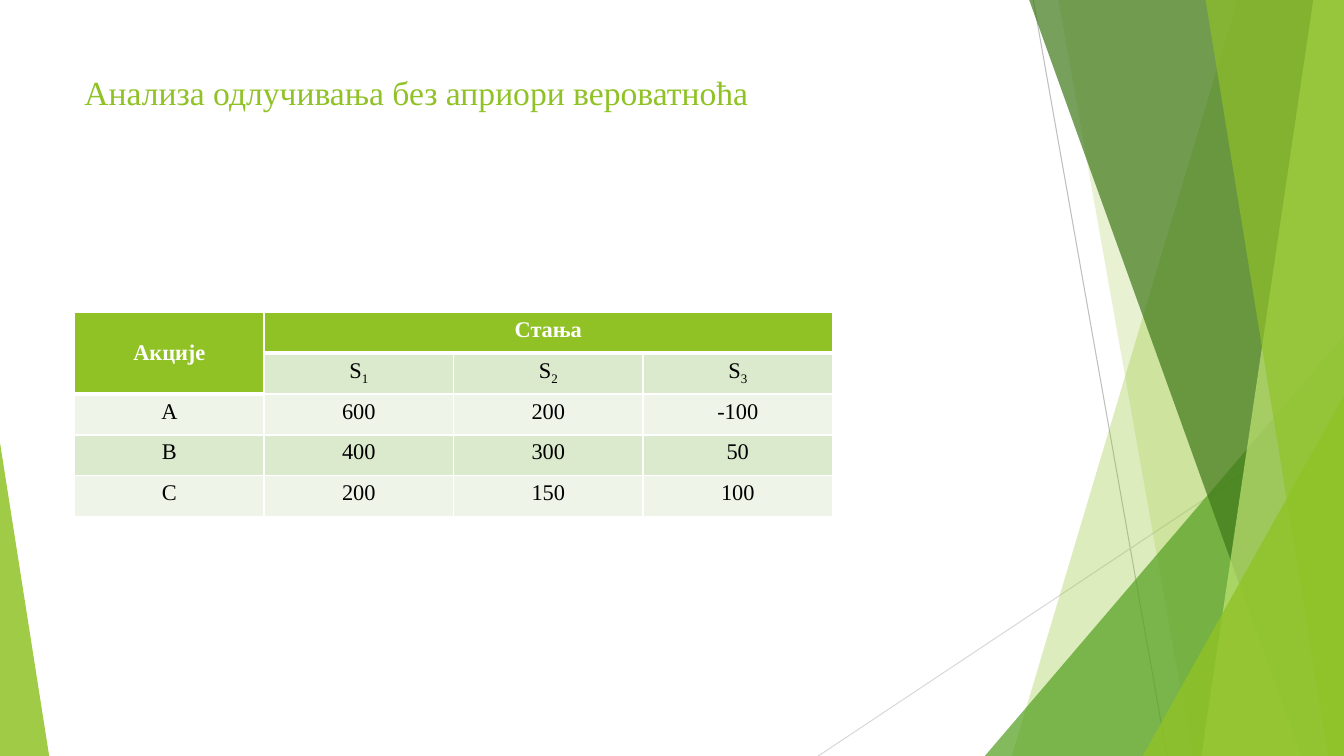
from lxml import etree
from pptx import Presentation
from pptx.dml.color import RGBColor
from pptx.enum.shapes import MSO_CONNECTOR, MSO_SHAPE
from pptx.enum.text import MSO_ANCHOR, PP_ALIGN
from pptx.oxml.ns import qn
from pptx.util import Cm, Pt

LINE = MSO_CONNECTOR.STRAIGHT
TRIANGLE = MSO_SHAPE.ISOSCELES_TRIANGLE
MIDDLE, TOP = MSO_ANCHOR.MIDDLE, MSO_ANCHOR.TOP
CENTER = PP_ALIGN.CENTER
FONT = "Times New Roman"
WIDTH, HEIGHT = 33.87, 19.05
COLORS = {
    "lime": "90C226", "green": "54A021", "dark": "3F7819", "light": "C0E474",
    "gray": "BFBFBF", "pale_gray": "D9D9D9", "white": "FFFFFF", "black": "000000",
    "band": "DBE9CD", "pale_band": "EEF4E8",
}


def paint(sp, color, alpha):
    sp.shadow.inherit = False
    sp.fill.solid()
    sp.fill.fore_color.rgb = RGBColor.from_string(COLORS[color])
    sp.line.fill.background()
    clr = sp.fill._xPr.find(qn("a:solidFill"))[0]
    etree.SubElement(clr, qn("a:alpha"), val=str(alpha * 1000))


def add_run(p, text, color, **formats):
    r = p.add_run()
    r.text = text
    r.font.color.rgb = RGBColor.from_string(COLORS[color])
    for name, value in {"name": FONT, **formats}.items():
        setattr(r.font, name, value)
    return r


prs = Presentation()
prs.slide_width, prs.slide_height = Cm(WIDTH), Cm(HEIGHT)
s = prs.slides.add_slide(prs.slide_layouts[6])

for x1, y1, x2, y2, color in [
    (26.04, 0, 29.41, HEIGHT, "gray"),
    (WIDTH, 10.24, 20.62, HEIGHT, "pale_gray"),
]:
    line = s.shapes.add_connector(LINE, Cm(x1), Cm(y1), Cm(x2), Cm(y2))
    line.line.color.rgb = RGBColor.from_string(COLORS[color])
    line.line.width = Pt(0.75)
    etree.SubElement(line._element.spPr, qn("a:effectLst"))

facets = [
    ("band", (31.19, 25.5), "lime", 30),
    ("band", (26.67, 30.05), "lime", 20),
    ("triangle", (24.82, 8.46, 9.05, 10.59, 1), "green", 72),
    ("band", (25.93, 32.79), "dark", 70),
    ("band", (33.1, 30.28), "light", 70),
    ("band", (30.38, 33.48), "lime", 65),
    ("triangle", (28.8, 9.98, 5.07, 9.07, 1), "lime", 80),
    ("triangle", (0, 11.15, 1.24, 7.9, 0), "lime", 85),
]
for kind, geometry, color, alpha in facets:
    if kind == "band":
        top_x, bottom_x = geometry
        fb = s.shapes.build_freeform(Cm(top_x), Cm(-0.02))
        fb.add_line_segments([
            (Cm(WIDTH), Cm(-0.02)), (Cm(WIDTH), Cm(HEIGHT)), (Cm(bottom_x), Cm(HEIGHT)),
        ])
        sp = fb.convert_to_shape()
    else:
        *box, apex = geometry
        sp = s.shapes.add_shape(TRIANGLE, *map(Cm, box))
        sp.adjustments[0] = apex
    paint(sp, color, alpha)

title = s.shapes.add_textbox(Cm(1.88), Cm(1.7), Cm(23.88), Cm(3.66))
tf = title.text_frame
tf.word_wrap = True
tf.vertical_anchor = TOP
add_run(tf.paragraphs[0], "Анализа одлучивања без априори вероватноћа", "lime", size=Pt(24))

rows = [
    ["Акције", "Стања", "", ""],
    ["", "S1", "S2", "S3"],
    ["А", "600", "200", "-100"],
    ["В", "400", "300", "50"],
    ["С", "200", "150", "100"],
]
table = s.shapes.add_table(5, 4, Cm(1.88), Cm(7.87), Cm(19.1), Cm(5.15)).table
table.first_row = table.horz_banding = False
table.cell(0, 0).merge(table.cell(1, 0))
table.cell(0, 1).merge(table.cell(0, 3))

for i, row in enumerate(rows):
    for j, text in enumerate(row):
        cell = table.cell(i, j)
        header = i == 0 or (i == 1 and j == 0)
        heavy_top = (i, j) == (2, 0) or (i == 1 and j > 0)
        tcPr = cell._tc.get_or_add_tcPr()
        for side, width in {"L": 1, "R": 1, "T": 3 if heavy_top else 1, "B": 3 if header else 1}.items():
            ln = etree.SubElement(tcPr, qn(f"a:ln{side}"), w=str(Pt(width)))
            fill = etree.SubElement(ln, qn("a:solidFill"))
            etree.SubElement(fill, qn("a:srgbClr"), val=COLORS["white"])
        cell.fill.solid()
        fill_name = "lime" if header else "band" if i % 2 else "pale_band"
        cell.fill.fore_color.rgb = RGBColor.from_string(COLORS[fill_name])
        cell.vertical_anchor = MIDDLE if (i, j) == (0, 0) else TOP
        p = cell.text_frame.paragraphs[0]
        p.alignment = CENTER
        formats = {"size": Pt(16), "bold": header}
        if text.startswith("S"):
            add_run(p, "S", "black", **formats)
            r = add_run(p, text[1:], "black", **formats)
            r.font._element.set("baseline", "-25000")
        elif text:
            add_run(p, text, "white" if header else "black", **formats)

prs.save("out.pptx")
